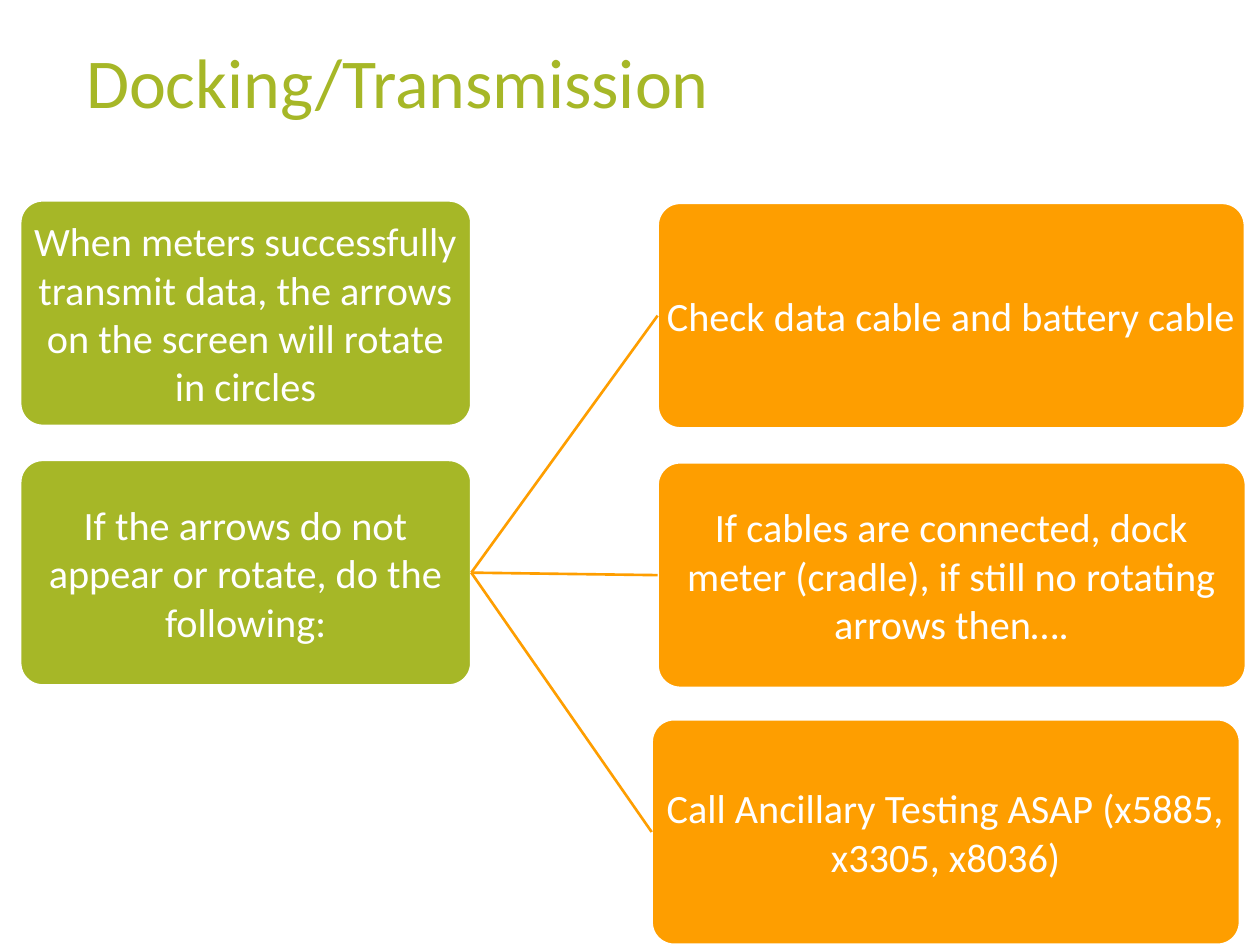
from pptx import Presentation
from pptx.dml.color import RGBColor
from pptx.enum.shapes import MSO_CONNECTOR as CONN, MSO_SHAPE as SHAPE
from pptx.enum.text import MSO_ANCHOR as ANCHOR, MSO_AUTO_SIZE as AUTO, PP_ALIGN as ALIGN
from pptx.oxml.ns import qn
from pptx.util import Pt
from lxml import etree

GREEN, ORANGE, WHITE = "A6B727", "FE9E00", "FFFFFF"
BOX_H = 128.9

SITUATIONS = [
    ("When meters successfully transmit data, the arrows on the screen will rotate in circles",
     (11.5, 114.5, 257.8, BOX_H)),
    ("If the arrows do not appear or rotate, do the following:",
     (11.5, 262.8, 257.8, BOX_H)),
]
ACTIONS = [
    ("Check data cable and battery cable", (375.8, 115.9, 335.6, BOX_H)),
    ("If cables are connected, dock meter (cradle), if still no rotating arrows then….",
     (375.8, 264.2, 336.2, BOX_H)),
    ("Call Ancillary Testing ASAP (x5885, x3305, x8036)", (372.4, 411, 336.2, BOX_H)),
]


def color(value):
    return RGBColor.from_string(value)


def style_text(p, size, value, align):
    p.alignment = align
    for r in p.runs:
        r.font.name = "Calibri"
        r.font.size = Pt(size)
        r.font.color.rgb = color(value)


def place(s, box):
    s.left, s.top, s.width, s.height = map(Pt, box)


def add_title(slide, text, box):
    s = slide.shapes.title
    place(s, box)
    tf = s.text_frame
    tf.text = text
    tf.auto_size = AUTO.NONE
    tf.vertical_anchor = ANCHOR.MIDDLE
    p = tf.paragraphs[0]
    p.line_spacing = 0.9
    style_text(p, 40, GREEN, ALIGN.LEFT)


def add_box(slide, text, box, fill):
    s = slide.shapes.add_shape(SHAPE.ROUNDED_RECTANGLE, *map(Pt, box))
    s.adjustments[0] = 0.1
    s.shadow.inherit = False
    s.fill.solid()
    s.fill.fore_color.rgb = color(fill)
    s.line.color.rgb = color(WHITE)
    s.line.width = Pt(1.5)
    tf = s.text_frame
    tf.word_wrap = True
    tf.vertical_anchor = ANCHOR.MIDDLE
    # The preset's own text area is already inset by its rounded corners
    tf.margin_left = tf.margin_right = tf.margin_top = tf.margin_bottom = Pt(1)
    tf.text = text
    style_text(tf.paragraphs[0], 23, WHITE, ALIGN.CENTER)
    return s


def join(slide, source, target):
    """Draw a line from the right side of source to the left side of target."""
    s = slide.shapes.add_connector(CONN.STRAIGHT, 0, 0, 0, 0)
    s.begin_connect(source, 3)
    s.end_connect(target, 1)
    s.line.color.rgb = color(ORANGE)
    s.line.width = Pt(1.5)
    etree.SubElement(s._element.spPr, qn("a:effectLst"))


def add_flow(slide):
    situations = [add_box(slide, text, box, GREEN) for text, box in SITUATIONS]
    for text, box in ACTIONS:
        join(slide, situations[-1], add_box(slide, text, box, ORANGE))


def main():
    prs = Presentation()
    prs.slide_width, prs.slide_height = Pt(720), Pt(540)
    slide = prs.slides.add_slide(prs.slide_layouts[5])
    add_title(slide, "Docking/Transmission", (42, 6, 602, 86))
    add_flow(slide)
    prs.save("out.pptx")


if __name__ == "__main__":
    main()
